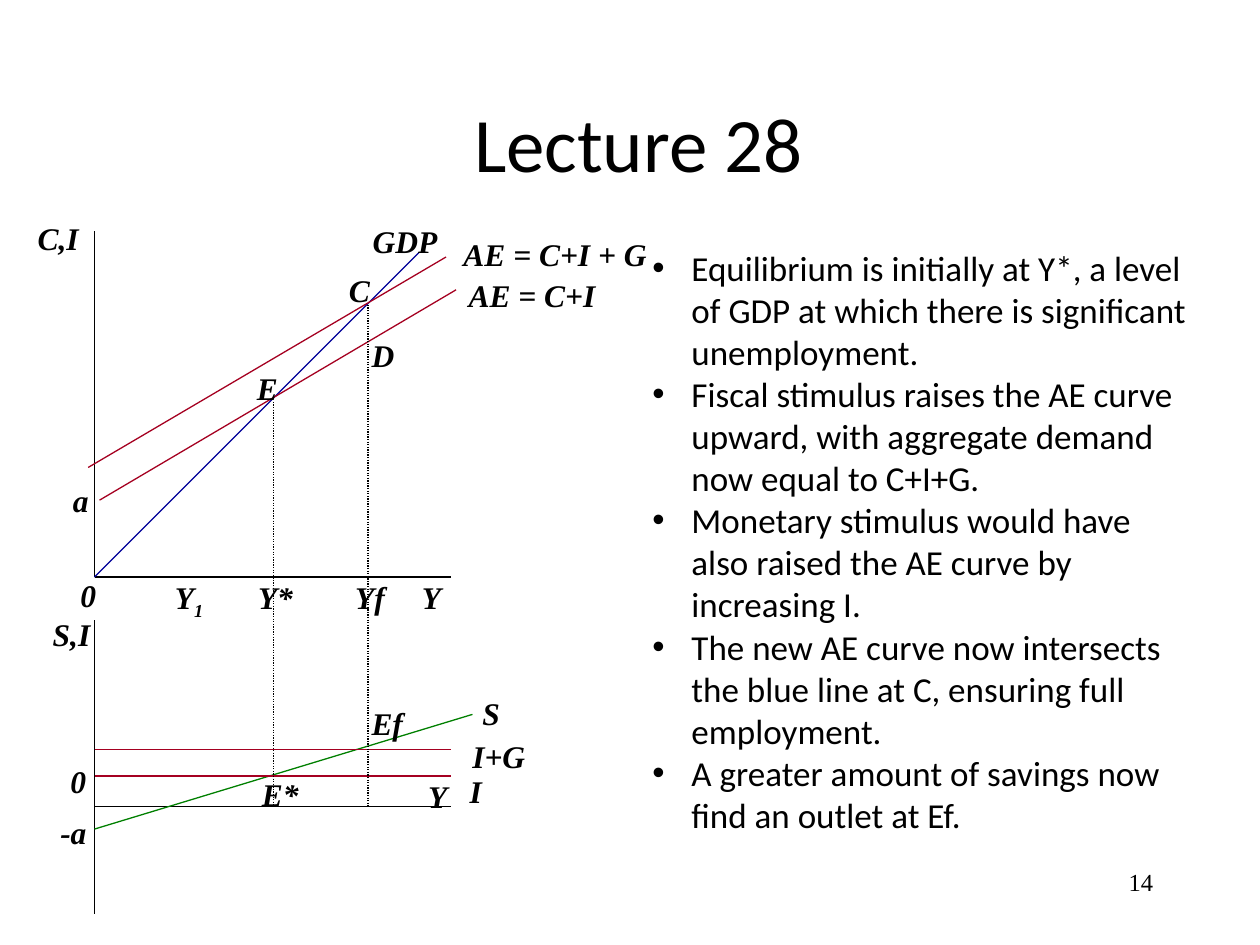
from lxml import etree
from pptx import Presentation
from pptx.dml.color import RGBColor
from pptx.enum.dml import MSO_LINE
from pptx.enum.shapes import MSO_CONNECTOR
from pptx.enum.text import MSO_ANCHOR, MSO_AUTO_SIZE, PP_ALIGN
from pptx.oxml.ns import qn
from pptx.util import Inches, Pt

STRAIGHT = MSO_CONNECTOR.STRAIGHT
DOTTED = MSO_LINE.ROUND_DOT
MIDDLE = MSO_ANCHOR.MIDDLE
GROW = MSO_AUTO_SIZE.SHAPE_TO_FIT_TEXT
CENTER, RIGHT = PP_ALIGN.CENTER, PP_ALIGN.RIGHT
TITLE_ONLY = 5

BLACK, BLUE, RED, GREEN = "000000", "000099", "A50021", "008000"
SANS, SERIF = "Calibri", "Times New Roman"

AXIS_X, AXIS_END = 0.75, 3.58
INCOME_Y, SAVING_Y = 4.58, 6.4
EQUILIBRIUM_X, FULL_EMPLOYMENT_X = 2.17, 2.92
INVESTMENT_Y, INVESTMENT_G_Y = 6.16, 5.95

LINES = [
    ((AXIS_X, INCOME_Y), (AXIS_END, INCOME_Y), BLACK),
    ((AXIS_X, SAVING_Y), (AXIS_END, SAVING_Y), BLACK),
    ((AXIS_X, INCOME_Y), (AXIS_X, 1.83), BLACK),
    ((AXIS_X, 7.25), (AXIS_X, 4.92), BLACK),
    ((AXIS_X, INCOME_Y), (3.33, 2), BLUE),
    ((AXIS_X, 6.58), (3.75, 5.67), GREEN),
    ((0.79, 3.97), (3.62, 2.3), RED),
    ((0.7, 3.71), (3.54, 2.04), RED),
    ((AXIS_X, INVESTMENT_Y), (AXIS_END, INVESTMENT_Y), RED),
    ((AXIS_X, INVESTMENT_G_Y), (AXIS_END, INVESTMENT_G_Y), RED),
]

DROP_LINES = [(EQUILIBRIUM_X, 3.19), (FULL_EMPLOYMENT_X, 2.42)]

LABELS = [
    ("Y*", 1.95, 4.54, 0.6),
    ("Yf", 2.72, 4.54, 0.6),
    ("Y", 3.25, 4.54, 0.35),
    ("Y", 3.3, 6.12, 0.35),
    ("S", 3.73, 5.46, 0.34),
    ("GDP", 2.86, 1.71, 0.72),
    ("S,I", 0.32, 4.83, 0.5),
    ("0", 0.54, 4.52, 0.33),
    ("0", 0.46, 6, 0.33),
    ("-a", 0.38, 6.4, 0.41),
    ("a", 0.48, 3.77, 0.33),
    ("C,I", 0.2, 1.69, 0.53),
    ("E", 1.94, 2.88, 0.37),
    ("E*", 1.98, 6.1, 0.5),
    ("Ef", 2.85, 5.54, 0.45),
    ("C", 2.67, 2.1, 0.37),
    ("D", 2.85, 2.62, 0.38),
    ("AE = C+I", 3.62, 2.14, 1.22),
    ("AE = C+I + G", 3.58, 1.82, 1.67),
    ("I", 3.63, 6.08, 0.3),
    ("I+G", 3.65, 5.8, 0.63),
]

POINTS = [
    "Equilibrium is initially at Y*, a level of GDP at which there is significant unemployment.",
    "Fiscal stimulus raises the AE curve upward, with aggregate demand now equal to C+I+G.",
    "Monetary stimulus would have also raised the AE curve by increasing I.",
    "The new AE curve now intersects the blue line at C, ensuring full employment.",
    "A greater amount of savings now find an outlet at Ef.",
]


def rgb(value):
    """Turn a hex string into a colour."""
    return RGBColor.from_string(value)


class SlideBuilder:
    """Hold the text and line style together with the current slide."""

    def __init__(self, slide):
        self.slide = slide
        self.label_size = 18
        self.line_width = 0.75
        self.bullet_indent = 0.31

    def style(self, paragraph, font, size, bold=False):
        """Format every run; bold text is also italic."""
        for run in paragraph.runs:
            run.font.name = font
            run.font.size = Pt(size)
            run.font.bold = run.font.italic = bold
            run.font.color.rgb = rgb(BLACK)

    def title(self, text, left, top, width, height):
        """Place and format the title placeholder."""
        heading = self.slide.shapes.title
        heading.left, heading.top = Inches(left), Inches(top)
        heading.width, heading.height = Inches(width), Inches(height)
        frame = heading.text_frame
        frame.text = text
        frame.vertical_anchor = MIDDLE
        frame.paragraphs[0].alignment = CENTER
        self.style(frame.paragraphs[0], SANS, 44)

    def text_box(self, text, left, top, width, height, wrap=True):
        """Add a text box and return its frame."""
        box = self.slide.shapes.add_textbox(
            Inches(left), Inches(top), Inches(width), Inches(height))
        frame = box.text_frame
        frame.text = text
        frame.word_wrap = wrap
        return frame

    def label(self, text, left, top, width, subscript=""):
        """Add a bold italic diagram label."""
        frame = self.text_box(text, left, top, width, 0.4, wrap=False)
        frame.auto_size = GROW
        paragraph = frame.paragraphs[0]
        if subscript:
            index = paragraph.add_run()
            index.text = subscript
            index.font._element.set("baseline", "-25000")
        self.style(paragraph, SERIF, self.label_size, bold=True)

    def line(self, start, end, color, dash=None):
        """Add a straight line without a shadow."""
        connector = self.slide.shapes.add_connector(
            STRAIGHT, *(Inches(value) for value in (*start, *end)))
        connector.line.color.rgb = rgb(color)
        connector.line.width = Pt(self.line_width)
        if dash:
            connector.line.dash_style = dash
        etree.SubElement(connector._element.spPr, qn("a:effectLst"))

    def bullets(self, points, left, top, width, height):
        """Add a bulleted list."""
        frame = self.text_box("\n".join(points), left, top, width, height)
        indent = Inches(self.bullet_indent)
        for paragraph in frame.paragraphs:
            properties = paragraph._p.get_or_add_pPr()
            properties.set("marL", str(indent))
            properties.set("indent", str(-indent))
            etree.SubElement(properties, qn("a:buFont"), typeface="Arial")
            etree.SubElement(properties, qn("a:buChar"), char="•")
            self.style(paragraph, SANS, 20)

    def page_number(self, text, left, top, width, height):
        """Add the right-aligned page number."""
        paragraph = self.text_box(text, left, top, width, height).paragraphs[0]
        paragraph.alignment = RIGHT
        self.style(paragraph, SERIF, 14)


def main():
    """Build the lecture slide and save it."""
    deck = Presentation()
    deck.slide_width, deck.slide_height = Inches(10), Inches(7.5)
    builder = SlideBuilder(deck.slides.add_slide(deck.slide_layouts[TITLE_ONLY]))

    builder.title("Lecture 28", 0.82, 0.5, 8.5, 1.25)
    for start, end, color in LINES:
        builder.line(start, end, color)
    for x, top in DROP_LINES:
        builder.line((x, top), (x, SAVING_Y), BLACK, DOTTED)
    builder.label("Y", 1.29, 4.54, 0.43, subscript="1")
    for label in LABELS:
        builder.label(*label)
    builder.bullets(POINTS, 5.08, 1.91, 4.5, 4.81)
    builder.page_number("14", 7.17, 6.83, 2.08, 0.5)

    deck.save("out.pptx")


if __name__ == "__main__":
    main()
